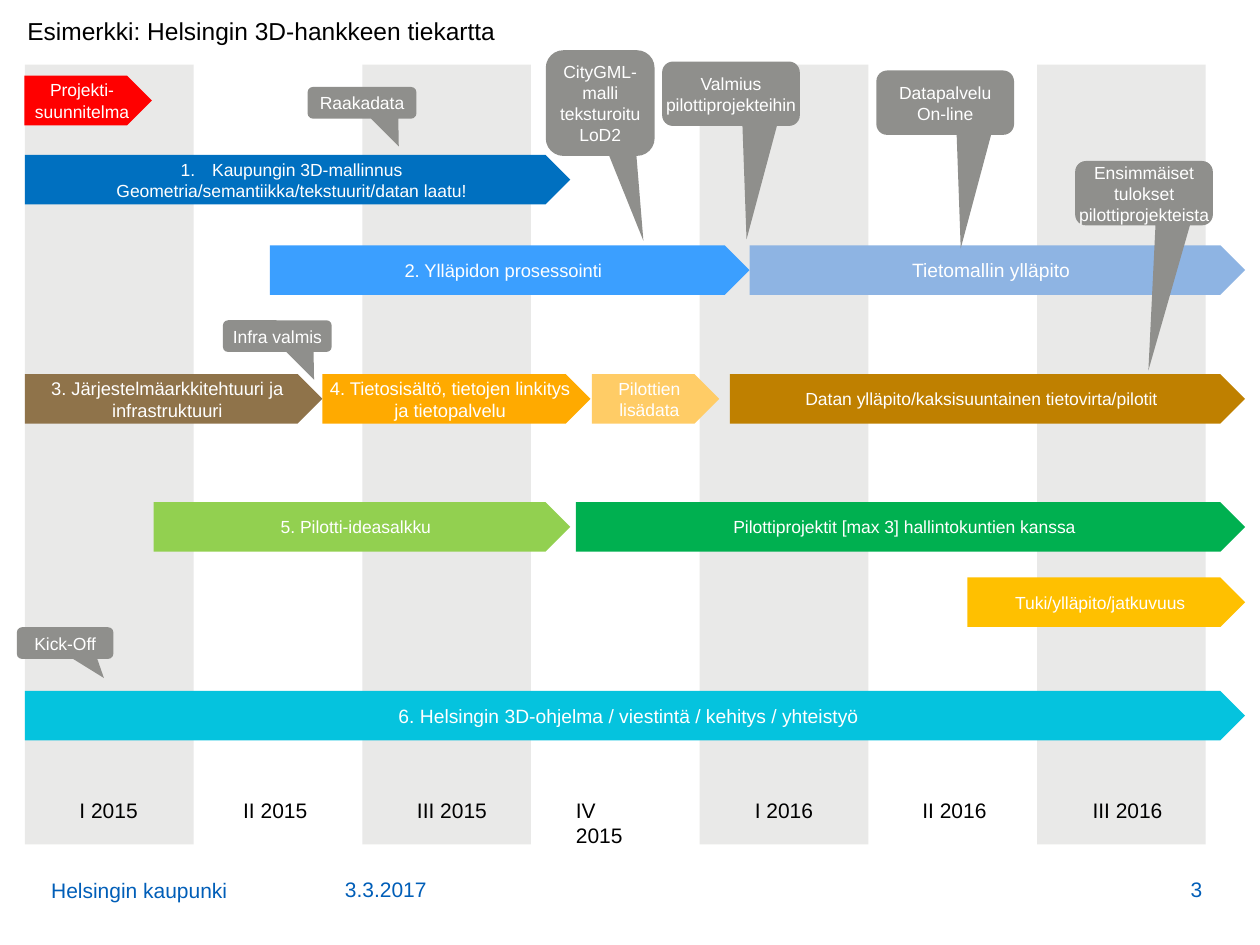
"""Build the Helsinki 3D project roadmap slide."""
from dataclasses import dataclass

from lxml.etree import SubElement
from pptx import Presentation
from pptx.dml.color import RGBColor
from pptx.enum.shapes import MSO_SHAPE
from pptx.enum.text import MSO_ANCHOR, MSO_AUTO_SIZE, PP_ALIGN
from pptx.oxml.ns import qn
from pptx.shapes.autoshape import Shape
from pptx.shapes.shapetree import GroupShapes, SlideShapes
from pptx.util import Pt

ShapeTree = SlideShapes | GroupShapes


@dataclass(frozen=True)
class Theme:
    font: str = "Arial"
    white: str = "FFFFFF"
    black: str = "000000"
    footer: str = "005EB8"
    band: str = "E9E9E8"
    callout: str = "8F8F8C"
    title_size: float = 14
    label_size: float = 12
    large_size: float = 11
    medium_size: float = 10.5
    small_size: float = 10


THEME = Theme()
BAR_HEIGHT = 28.3
BAND_TOP, BAND_WIDTH, BAND_HEIGHT = 37, 96.4, 445.6
CHART_LEFT = 14.2
LABEL_TOP, LABEL_HEIGHT = 452.8, 20.2


@dataclass(frozen=True)
class Bar:
    text: str
    left: float
    top: float
    width: float
    color: str
    size: float = THEME.small_size
    numbered: bool = False


@dataclass(frozen=True)
class Callout:
    text: str
    left: float
    top: float
    width: float
    height: float
    tip_x: float
    tip_y: float


@dataclass(frozen=True)
class Footer:
    text: str
    left: float
    top: float
    width: float
    height: float
    align: PP_ALIGN = PP_ALIGN.LEFT


QUARTERS = {
    "I 2015": 42.5, "II 2015": 136.1, "III 2015": 235.4, "IV 2015": 326.2,
    "I 2016": 428.4, "II 2016": 524.2, "III 2016": 621.4,
}

BARS = [
    Bar("Kaupungin 3D-mallinnus\nGeometria/semantiikka/tekstuurit/datan laatu!",
        CHART_LEFT, 88.5, 311.7, "0070C0", numbered=True),
    Bar("2. Ylläpidon prosessointi", 154.2, 140.2, 274.1, "3B9FFF", THEME.medium_size),
    Bar("Tietomallin ylläpito", 428.3, 140.2, 283.2, "8EB4E3", THEME.large_size),
    Bar("3. Järjestelmäarkkitehtuuri ja infrastruktuuri",
        CHART_LEFT, 213.8, 170, "8F734A", THEME.medium_size),
    Bar("4. Tietosisältö, tietojen linkitys ja tietopalvelu",
        184.2, 213.8, 153.3, "FFAA00", THEME.medium_size),
    Bar("Pilottien\nlisädata", 338.2, 213.8, 72.8, "FFCC66"),
    Bar("Datan ylläpito/kaksisuuntainen tietovirta/pilotit", 417.1, 213.8, 294.4, "BF8000"),
    Bar("5. Pilotti-ideasalkku", 87.8, 287, 238.1, "92D050"),
    Bar("Pilottiprojektit [max 3] hallintokuntien kanssa", 329.1, 287, 382.4, "00B050"),
    Bar("Tuki/ylläpito/jatkuvuus", 552.8, 330, 158.7, "FFC000"),
    Bar("6. Helsingin 3D-ohjelma / viestintä / kehitys / yhteistyö",
        CHART_LEFT, 394.8, 697.3, "05C3DE", THEME.large_size),
    Bar("Projekti-\nsuunnitelma", 14, 43.3, 72.8, "FF0000"),
]

CALLOUTS = [
    Callout("Kick-Off", 9.6, 358.4, 55.2, 18.1, 0.402, 1.104),
    Callout("Infra valmis", 127.4, 183, 62.2, 18.1, 0.338, 1.378),
    Callout("Raakadata", 175.8, 49.7, 62.2, 18.1, 0.338, 1.378),
    Callout("CityGML-malli teksturoitu LoD2", 311.9, 28.7, 62.2, 60.4, 0.397, 1.303),
    Callout("Valmius\npilottiprojekteihin", 378.4, 35.2, 78.7, 36.8, 0.113, 2.262),
    Callout("Datapalvelu\nOn-line", 500.8, 40.3, 78.7, 36.8, 0.113, 2.262),
    Callout("Ensimmäiset tulokset pilottiprojekteista", 614.4, 92, 78.7, 36.8, 0.032, 2.754),
]

FOOTERS = [
    Footer("3.3.2017", 190, 491, 111.6, 28.1),
    Footer("Helsingin kaupunki", 22.2, 482.4, 167.8, 36.7),
    Footer("3", 609.1, 491, 85, 28.1, PP_ALIGN.RIGHT),
]


def write_text(shape: Shape, text: str, *, size: float, color: str,
               align: PP_ALIGN = PP_ALIGN.LEFT, anchor: MSO_ANCHOR = MSO_ANCHOR.TOP,
               inset_x: float = 2.9, inset_y: float = 2.9, wrap: bool = True) -> None:
    frame = shape.text_frame
    frame.text = text
    frame.word_wrap = wrap
    frame.auto_size = MSO_AUTO_SIZE.NONE if wrap else MSO_AUTO_SIZE.SHAPE_TO_FIT_TEXT
    frame.vertical_anchor = anchor
    frame.margin_left = frame.margin_right = Pt(inset_x)
    frame.margin_top = frame.margin_bottom = Pt(inset_y)
    for paragraph in frame.paragraphs:
        paragraph.alignment = align
        for run in paragraph.runs:
            run.font.name = THEME.font
            run.font.size = Pt(size)
            run.font.color.rgb = RGBColor.from_string(color)


def add_filled_shape(shapes: ShapeTree, kind: MSO_SHAPE, left: float, top: float,
                     width: float, height: float, color: str) -> Shape:
    shape = shapes.add_shape(kind, Pt(left), Pt(top), Pt(width), Pt(height))
    shape.shadow.inherit = False
    shape.fill.solid()
    shape.fill.fore_color.rgb = RGBColor.from_string(color)
    shape.line.fill.background()
    return shape


def write_centred(shape: Shape, text: str, size: float) -> None:
    write_text(shape, text, size=size, color=THEME.white, align=PP_ALIGN.CENTER,
               anchor=MSO_ANCHOR.MIDDLE, inset_x=0)


def add_label(shapes: ShapeTree, text: str, left: float, top: float, width: float,
              height: float, size: float) -> None:
    box = shapes.add_textbox(Pt(left), Pt(top), Pt(width), Pt(height))
    write_text(box, text, size=size, color=THEME.black, wrap=False)


def number_first_paragraph(shape: Shape) -> None:
    properties = shape.text_frame.paragraphs[0]._p.get_or_add_pPr()
    properties.set("marL", str(Pt(18)))
    properties.set("indent", str(Pt(-18)))
    SubElement(properties, qn("a:buFont"), typeface="+mj-lt")
    SubElement(properties, qn("a:buAutoNum"), type="arabicPeriod")


def add_timeline(shapes: ShapeTree) -> None:
    for column in range(0, len(QUARTERS), 2):
        add_filled_shape(shapes, MSO_SHAPE.RECTANGLE, CHART_LEFT + column * BAND_WIDTH,
                         BAND_TOP, BAND_WIDTH, BAND_HEIGHT, THEME.band)
    for quarter, left in QUARTERS.items():
        width = 39.6 + 3.2 * (len(quarter) - len("I 2015"))
        add_label(shapes, quarter, left, LABEL_TOP, width, LABEL_HEIGHT, THEME.label_size)


def add_bar(shapes: ShapeTree, bar: Bar) -> None:
    shape = add_filled_shape(shapes, MSO_SHAPE.PENTAGON, bar.left, bar.top,
                             bar.width, BAR_HEIGHT, bar.color)
    write_centred(shape, bar.text, bar.size)
    if bar.numbered:
        number_first_paragraph(shape)


def add_callout(shapes: ShapeTree, callout: Callout) -> None:
    shape = add_filled_shape(shapes, MSO_SHAPE.ROUNDED_RECTANGULAR_CALLOUT, callout.left,
                             callout.top, callout.width, callout.height, THEME.callout)
    shape.adjustments[0] = callout.tip_x
    shape.adjustments[1] = callout.tip_y
    write_centred(shape, callout.text, THEME.small_size)


def add_footer(shapes: ShapeTree, footer: Footer) -> None:
    box = shapes.add_textbox(Pt(footer.left), Pt(footer.top), Pt(footer.width), Pt(footer.height))
    write_text(box, footer.text, size=THEME.label_size, color=THEME.footer, align=footer.align,
               anchor=MSO_ANCHOR.BOTTOM, inset_x=7.2, inset_y=3.6)


def main() -> None:
    presentation = Presentation()
    presentation.slide_width, presentation.slide_height = Pt(720), Pt(540)
    slide = presentation.slides.add_slide(presentation.slide_layouts[6])
    for footer in FOOTERS:
        add_footer(slide.shapes, footer)
    add_timeline(slide.shapes.add_group_shape().shapes)
    for bar in BARS:
        add_bar(slide.shapes, bar)
    for callout in CALLOUTS:
        add_callout(slide.shapes, callout)
    add_label(slide.shapes, "Esimerkki: Helsingin 3D-hankkeen tiekartta",
              12.7, 6, 274.3, 23, THEME.title_size)
    presentation.save("out.pptx")


if __name__ == "__main__":
    main()
